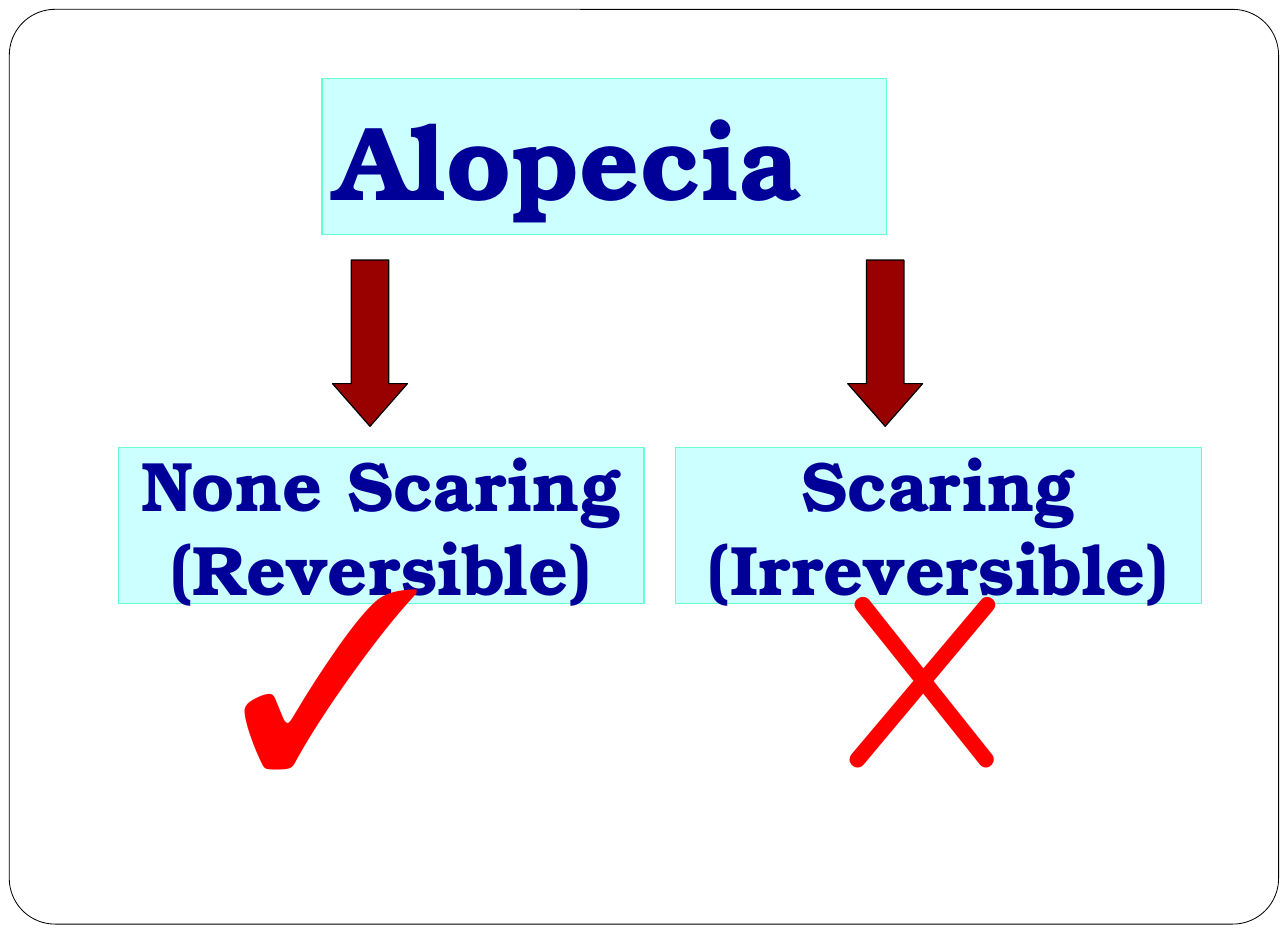
from dataclasses import dataclass

from pptx import Presentation
from pptx.dml.color import RGBColor
from pptx.enum import shapes, text
from pptx.util import Inches, Pt


@dataclass(frozen=True)
class Theme:
    paper: str = "FFFFFF"
    outline: str = "000000"
    box: str = "CCFFFF"
    box_line: str = "66FFCC"
    navy: str = "000099"
    arrow: str = "990000"
    mark: str = "FF0000"
    heading_font: str = "TeX Gyre Bonum"
    title_size: float = 64.8
    branch_size: float = 43
    mark_size: float = 154


THEME = Theme()
TITLE = "Alopecia"
# Lines, box left, arrow left, mark, mark left, mark font
BRANCHES = [
    (["None Scaring", "(Reversible)"], 1.01, 2.84, "✓", 1.36, "Times New Roman"),
    (["Scaring", "(Irreversible)"], 5.77, 7.24, "X", 6.42, "Comic Neue"),
]
BOX_SIZE = (4.49, 1.33)
ARROW_SIZE = (0.64, 1.42)
MARK_SIZE = (2.93, 2.69)
ARROW_TOP, BOX_TOP, MARK_TOP = 2.22, 3.82, 4.36

KIND = shapes.MSO_SHAPE
ALIGN = text.PP_ALIGN
ANCHOR = text.MSO_ANCHOR


def add_shape(slide, kind, left, top, size, fill, line, weight=0.75):
    shape = slide.shapes.add_shape(kind, *map(Inches, (left, top, *size)))
    shape.shadow.inherit = False
    shape.fill.solid()
    shape.fill.fore_color.rgb = RGBColor.from_string(fill)
    shape.line.color.rgb = RGBColor.from_string(line)
    shape.line.width = Pt(weight)
    return shape


def write(shape, lines, size, color, font, bold=False, align=ALIGN.CENTER,
          anchor=ANCHOR.MIDDLE, side=0.11, bottom=0.05):
    """Fill a shape with one paragraph per line; insets are in inches."""
    frame = shape.text_frame
    frame.word_wrap = True
    frame.vertical_anchor = anchor
    frame.margin_left = frame.margin_right = Inches(side)
    frame.margin_top, frame.margin_bottom = Inches(0.05), Inches(bottom)
    frame.text = "\n".join(lines)
    for paragraph in frame.paragraphs:
        paragraph.alignment = align
        paragraph.font.size = Pt(size)
        paragraph.font.bold = bold
        paragraph.font.name = font
        paragraph.font.color.rgb = RGBColor.from_string(color)


def add_branch(slide, lines, box_left, arrow_left, mark, mark_left, mark_font):
    box = add_shape(slide, KIND.RECTANGLE, box_left, BOX_TOP, BOX_SIZE,
                    THEME.box, THEME.box_line)
    write(box, lines, THEME.branch_size, THEME.navy, THEME.heading_font, bold=True)
    arrow = add_shape(slide, KIND.DOWN_ARROW, arrow_left, ARROW_TOP, ARROW_SIZE,
                      THEME.arrow, THEME.outline)
    arrow.adjustments[1] = 0.57
    mark_box = slide.shapes.add_textbox(*map(Inches, (mark_left, MARK_TOP, *MARK_SIZE)))
    write(mark_box, [mark], THEME.mark_size, THEME.mark, mark_font,
          anchor=ANCHOR.TOP, side=0.1)


def main():
    presentation = Presentation()
    presentation.slide_width, presentation.slide_height = Inches(11), Inches(8)
    slide = presentation.slides.add_slide(presentation.slide_layouts[6])

    border = add_shape(slide, KIND.ROUNDED_RECTANGLE, 0.08, 0.08, (10.84, 7.81),
                       THEME.paper, THEME.outline, weight=0.5)
    border.adjustments[0] = 0.05
    title = add_shape(slide, KIND.RECTANGLE, 2.75, 0.67, (4.82, 1.33),
                      THEME.box, THEME.box_line)
    write(title, [TITLE], THEME.title_size, THEME.navy, THEME.heading_font,
          bold=True, align=ALIGN.LEFT, anchor=ANCHOR.BOTTOM, bottom=0.11)
    for branch in BRANCHES:
        add_branch(slide, *branch)
    presentation.save("out.pptx")


if __name__ == "__main__":
    main()
